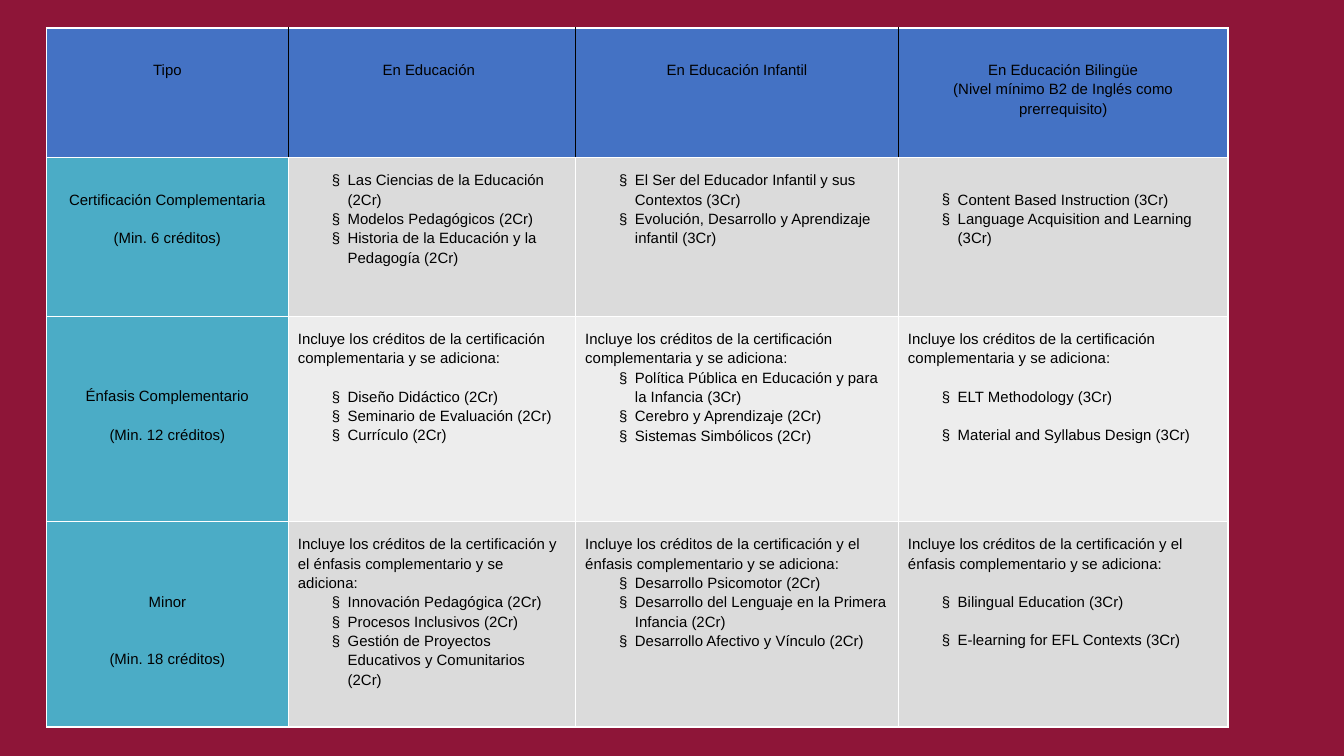
from typing import NamedTuple

from lxml.etree import SubElement
from pptx import Presentation
from pptx.dml.color import RGBColor as RGB
from pptx.enum.text import PP_ALIGN as AL
from pptx.oxml.ns import qn
from pptx.util import Cm, Pt

COLORS = {
    "back": "8E1538",
    "header": "4472C4",
    "type": "4BACC6",
    "dark": "DBDBDB",
    "light": "EDEDED",
    "text": "000000",
    "line": "FFFFFF",
}
LINE_CM = 0.36  # height of one line of text
COL_WIDTHS = (4.57, 5.43, 6.1, 6.23)
ROW_HEIGHTS = (2.45, 3, 3.88, 3.88)
RIGHT_MARGINS = (0.18, 0.3, 0.18, 0.18)


class Para(NamedTuple):
    """One paragraph; gap is the number of lines left free above it."""
    text: str
    kind: str = "center"
    gap: int = 0


def intro(text):
    return Para(f"Incluye los créditos de {text} y se adiciona:", "left")


def bullets(*texts, first=0, gap=0):
    """Bulleted paragraphs with gap lines between them and first lines above."""
    return [Para(t, "bullet", gap if i else first) for i, t in enumerate(texts)]


EMPHASIS = intro("la certificación complementaria")
MINOR = intro("la certificación y el énfasis complementario")

ROWS = [
    [
        [Para("Tipo", gap=1)],
        [Para("En Educación", gap=1)],
        [Para("En Educación Infantil", gap=1)],
        [Para("En Educación Bilingüe", gap=1),
         Para("(Nivel mínimo B2 de Inglés como prerrequisito)")],
    ],
    [
        [Para("Certificación Complementaria", gap=1),
         Para("(Min. 6 créditos)", gap=1)],
        bullets("Las Ciencias de la Educación (2Cr)",
                "Modelos Pedagógicos (2Cr)",
                "Historia de la Educación y la Pedagogía (2Cr)"),
        bullets("El Ser del Educador Infantil y sus Contextos (3Cr)",
                "Evolución, Desarrollo y Aprendizaje infantil (3Cr)"),
        bullets("Content Based Instruction (3Cr)",
                "Language Acquisition and Learning (3Cr)", first=1),
    ],
    [
        [Para("Énfasis Complementario", gap=3),
         Para("(Min. 12 créditos)", gap=1)],
        [EMPHASIS, *bullets("Diseño Didáctico (2Cr)",
                            "Seminario de Evaluación (2Cr)",
                            "Currículo (2Cr)", first=1)],
        [EMPHASIS, *bullets("Política Pública en Educación y para la Infancia (3Cr)",
                            "Cerebro y Aprendizaje (2Cr)",
                            "Sistemas Simbólicos (2Cr)")],
        [EMPHASIS, *bullets("ELT Methodology (3Cr)",
                            "Material and Syllabus Design (3Cr)", first=1, gap=1)],
    ],
    [
        [Para("Minor", gap=3), Para("(Min. 18 créditos)", gap=2)],
        [MINOR, *bullets("Innovación Pedagógica (2Cr)",
                         "Procesos Inclusivos (2Cr)",
                         "Gestión de Proyectos Educativos y Comunitarios (2Cr)")],
        [MINOR, *bullets("Desarrollo Psicomotor (2Cr)",
                         "Desarrollo del Lenguaje en la Primera Infancia (2Cr)",
                         "Desarrollo Afectivo y Vínculo (2Cr)")],
        [MINOR, *bullets("Bilingual Education (3Cr)",
                         "E-learning for EFL Contexts (3Cr)", first=1, gap=1)],
    ],
]


class Deck:
    font = "Arial"
    size = Pt(8)

    def __init__(self, width, height):
        self.prs = Presentation()
        self.prs.slide_width, self.prs.slide_height = Cm(width), Cm(height)

    def add_slide(self, color):
        self.s = self.prs.slides.add_slide(self.prs.slide_layouts[6])
        self.paint(self.s.background.fill, color)

    def paint(self, fill, color):
        fill.solid()
        fill.fore_color.rgb = RGB.from_string(COLORS[color])

    def borders(self, cell, **sides):
        tc_pr = cell._tc.get_or_add_tcPr()
        for side in "LRTB":
            ln = SubElement(tc_pr, qn(f"a:ln{side}"), w=str(Pt(1)))
            fill = SubElement(ln, qn("a:solidFill"))
            color = COLORS[sides.get(side, "line")]
            SubElement(fill, qn("a:srgbClr"), val=color)

    def bullet(self, p):
        p_pr = p._p.get_or_add_pPr()
        p_pr.set("marL", str(Cm(0.94)))
        p_pr.set("indent", str(-Cm(0.3)))
        SubElement(p_pr, qn("a:buFont"), typeface=self.font)
        SubElement(p_pr, qn("a:buChar"), char="§")

    def cell_text(self, cell, paras):
        """Fill a cell; the first paragraph's gap goes into the top margin."""
        cell.margin_top = Cm(0.23 + paras[0].gap * LINE_CM)
        cell.margin_bottom = Cm(0.23)
        tf = cell.text_frame
        for i, para in enumerate(paras):
            p = tf.add_paragraph() if i else tf.paragraphs[0]
            if para.kind == "bullet":
                self.bullet(p)
            p.alignment = AL.CENTER if para.kind == "center" else AL.LEFT
            p.line_spacing = 1.15
            p.space_before = Cm(para.gap * LINE_CM) if i else Pt(0)
            r = p.add_run()
            r.text = para.text
            r.font.name, r.font.size, r.font.bold = self.font, self.size, False
            r.font.color.rgb = RGB.from_string(COLORS["text"])

    def table(self, left, top, rows):
        frame = self.s.shapes.add_table(
            len(rows), len(COL_WIDTHS), Cm(left), Cm(top),
            Cm(sum(COL_WIDTHS)), Cm(sum(ROW_HEIGHTS)))
        tbl = frame.table
        tbl.first_row = tbl.horz_banding = False
        for col, width in zip(tbl.columns, COL_WIDTHS):
            col.width = Cm(width)
        for row, height in zip(tbl.rows, ROW_HEIGHTS):
            row.height = Cm(height)
        last = len(COL_WIDTHS) - 1
        for i, row in enumerate(rows):
            for j, paras in enumerate(row):
                cell = tbl.cell(i, j)
                cell.margin_left, cell.margin_right = Cm(0.18), Cm(RIGHT_MARGINS[j])
                self.borders(cell,
                             L="text" if i == 0 and j > 0 else "line",
                             R="text" if i == 0 and j < last else "line")
                if i == 0:
                    color = "header"
                elif j == 0:
                    color = "type"
                else:
                    color = "dark" if i % 2 else "light"
                self.paint(cell.fill, color)
                self.cell_text(cell, paras)


def main():
    deck = Deck(25.4, 14.29)
    deck.add_slide("back")
    deck.table(0.88, 0.53, ROWS)
    deck.prs.save("out.pptx")


if __name__ == "__main__":
    main()
